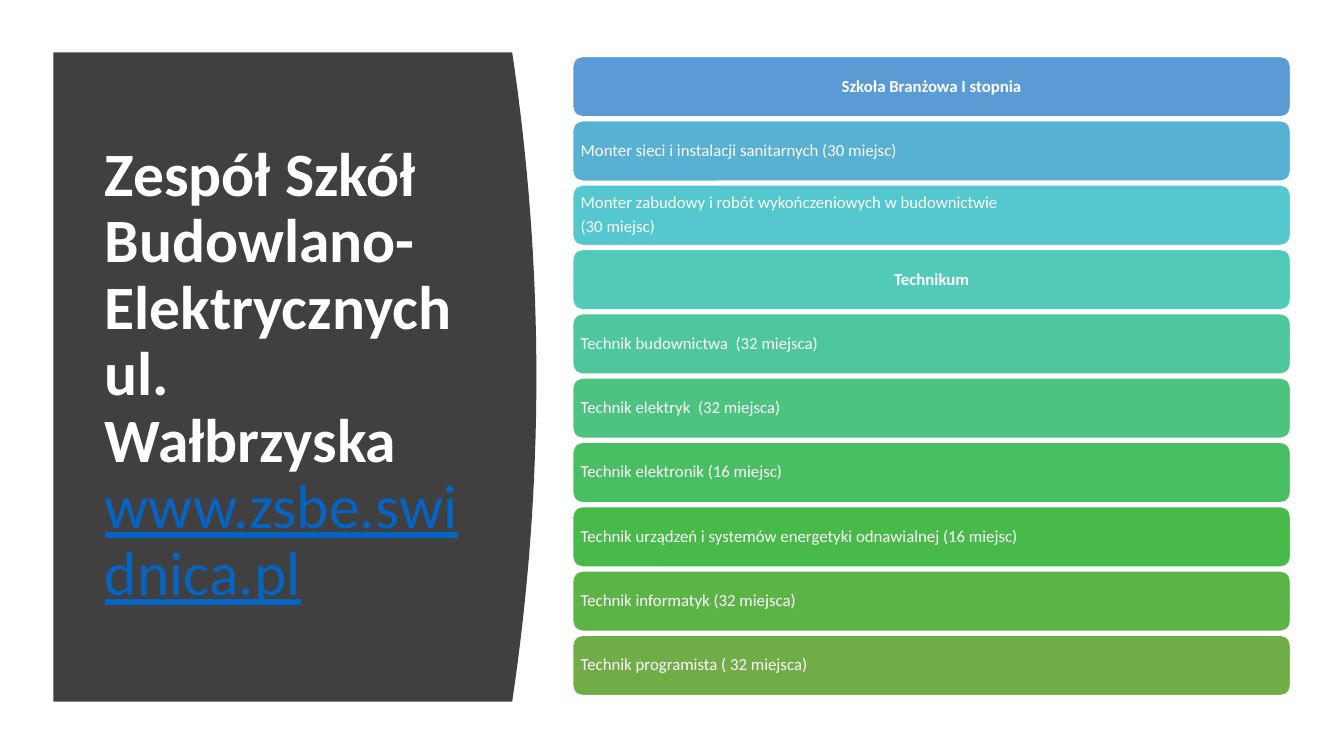
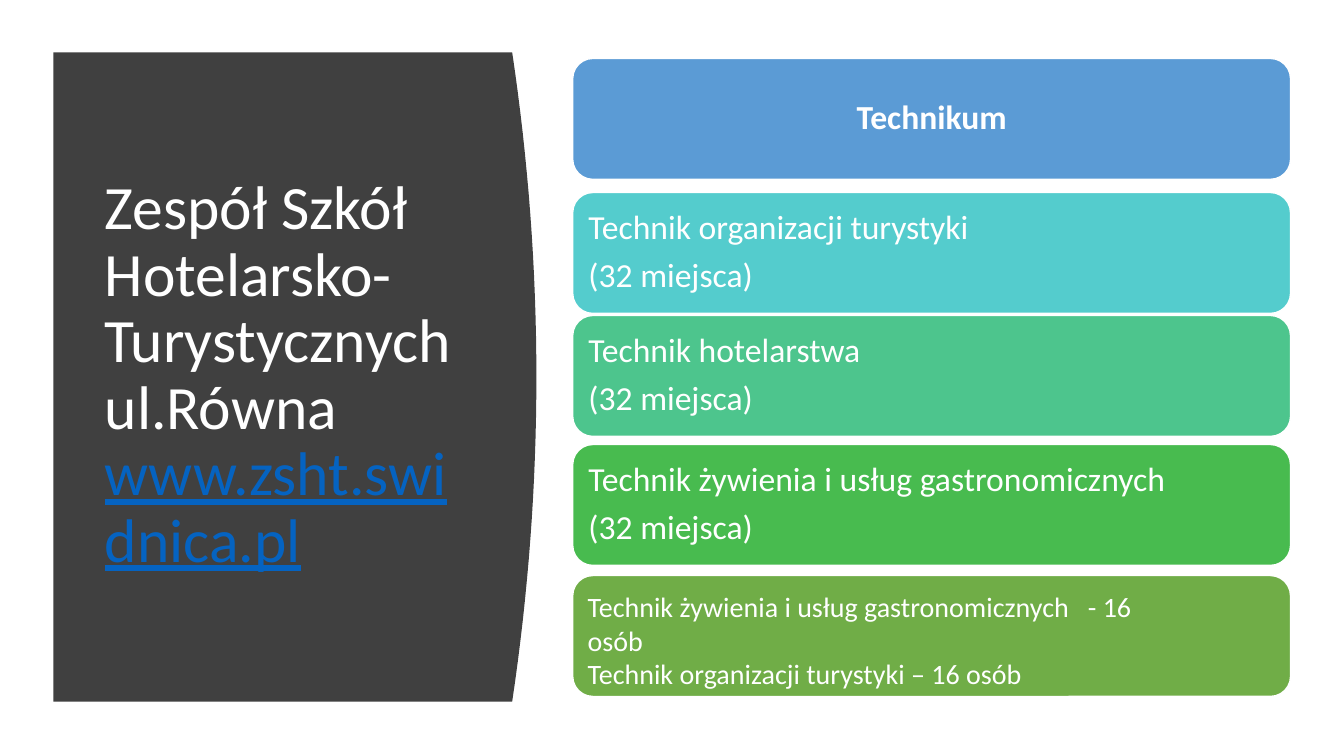
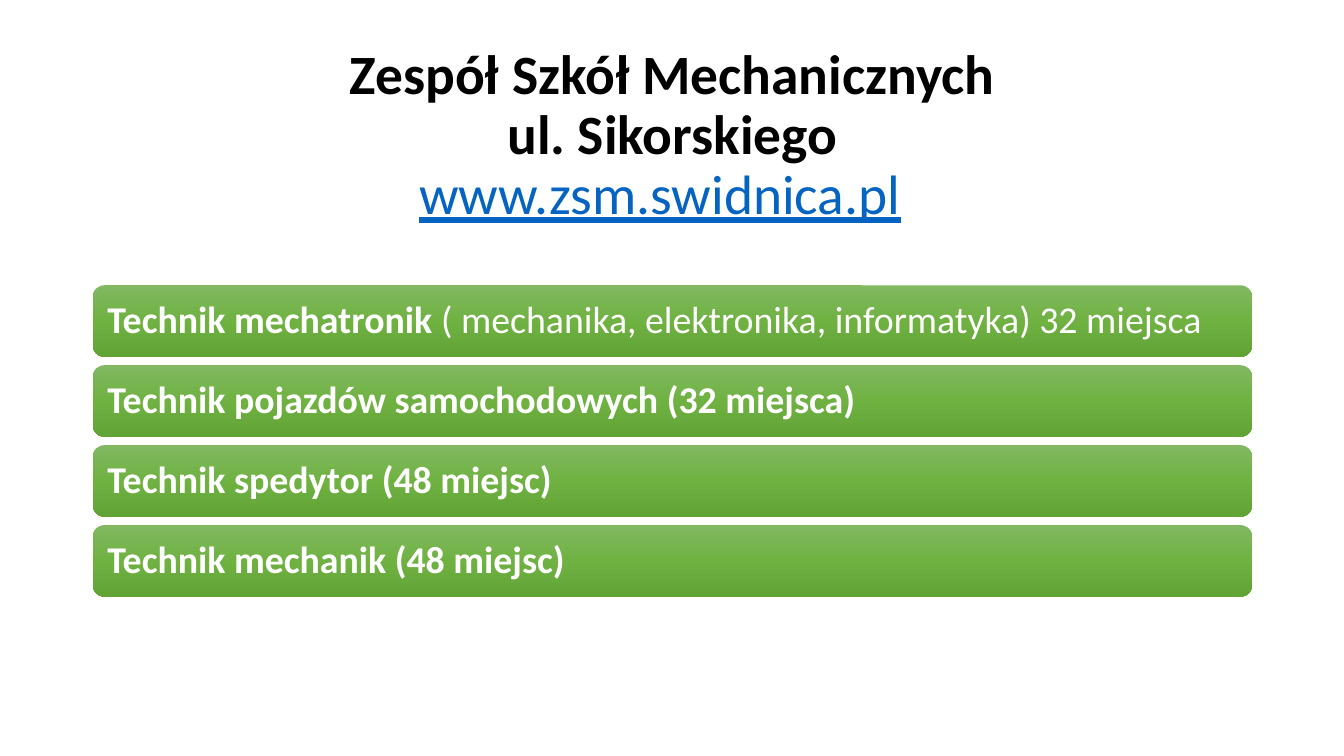
from copy import deepcopy
from dataclasses import dataclass

from pptx import Presentation
from pptx.dml.color import RGBColor
from pptx.enum.shapes import MSO_SHAPE
from pptx.enum.text import MSO_ANCHOR, PP_ALIGN
from pptx.oxml.ns import qn
from pptx.util import Inches, Pt

ROUNDED = MSO_SHAPE.ROUNDED_RECTANGLE
LEFT, CENTER = PP_ALIGN.LEFT, PP_ALIGN.CENTER
TOP, MIDDLE = MSO_ANCHOR.TOP, MSO_ANCHOR.MIDDLE


@dataclass(frozen=True)
class Theme:
    font: str = "Calibri"
    white: str = "FFFFFF"
    black: str = "000000"
    panel: str = "404040"
    link: str = "0563C1"
    gradient: tuple = ((0, "81B861"), (0.5, "6FB242"), (1, "62A336"))
    panel_title: float = 44
    wide_title: float = 39.6
    line_spacing: float = 0.9
    space_after: float = 0.35


THEME = Theme()

PANEL = dict(left=0.53, top=0.52, bottom=6.96, edge=5.08, bulge=0.24, steps=32)
PANEL_TITLE_BOX = (0.94, 1.11, 3.74, 5.24)
WIDE_TITLE_BOX = (0.92, 0.4, 11.5, 1.91)

BUILDING_SCHOOL = dict(
    name=["Zespół Szkół Budowlano-Elektrycznych", "ul. Wałbrzyska"],
    address="www.zsbe.swidnica.pl", tail=" ", bold=True,
    bars=dict(left=5.68, width=7.12, height=0.6, size=12, inset=0.05,
              tops=[0.56 + 0.638 * index for index in range(10)]),
    rows=[
        dict(lines=["Szkoła Branżowa I stopnia"], fill="5B9BD5", heading=True),
        dict(lines=["Monter sieci i instalacji sanitarnych (30 miejsc)"], fill="58B1D2"),
        dict(lines=["Monter zabudowy i robót wykończeniowych w budownictwie", "(30 miejsc)"],
             fill="55C7CE"),
        dict(lines=["Technikum"], fill="52CAB8", heading=True),
        dict(lines=["Technik budownictwa  (32 miejsca)"], fill="4FC79C"),
        dict(lines=["Technik elektryk  (32 miejsca)"], fill="4CC37F"),
        dict(lines=["Technik elektronik (16 miejsc)"], fill="49BF64"),
        dict(lines=["Technik urządzeń i systemów energetyki odnawialnej (16 miejsc)"],
             fill="47BA49"),
        dict(lines=["Technik informatyk (32 miejsca)"], fill="5CB447"),
        dict(lines=["Technik programista ( 32 miejsca)"], fill="70AD47"),
    ],
)

HOTEL_SCHOOL = dict(
    name=["Zespół Szkół Hotelarsko-Turystycznych", "ul.Równa"],
    address="www.zsht.swidnica.pl", tail=" ", bold=False,
    bars=dict(left=5.68, width=7.12, height=1.2, size=24, inset=0.1,
              tops=[0.58, 1.91, 3.13, 4.41, 5.71]),
    rows=[
        dict(lines=["Technikum"], fill="5B9BD5", heading=True),
        dict(lines=["Technik organizacji turystyki", "(32 miejsca)"], fill="54CCCD"),
        dict(lines=["Technik hotelarstwa", "(32 miejsca)"], fill="4DC58D"),
        dict(lines=["Technik żywienia i usług gastronomicznych", "(32 miejsca)"],
             fill="48BB4F"),
        dict(lines=["Technik żywienia i usług gastronomicznych   - 16 osób",
                    "Technik organizacji turystyki – 16 osób"], fill="70AD47",
             text=dict(size=20, anchor=TOP, insets=(0.09, 0.08, 0.95, 0),
                       line_spacing=1, space_after=0)),
    ],
)

MECHANICAL_SCHOOL = dict(
    name=["Zespół Szkół Mechanicznych", "ul. Sikorskiego"],
    address="www.zsm.swidnica.pl", tail="  ", bold=True,
    bars=dict(left=0.92, width=11.5, height=0.71, size=27, inset=0.11,
              tops=[2.83 + 0.793 * index for index in range(4)]),
    rows=[
        dict(lines=[[("Technik mechatronik", dict(bold=True)),
                     (" ( mechanika, elektronika, informatyka) 32 miejsca", {})]]),
        dict(lines=["Technik pojazdów samochodowych (32 miejsca)"], text=dict(bold=True)),
        dict(lines=["Technik spedytor (48 miejsc)"], text=dict(bold=True)),
        dict(lines=["Technik mechanik (48 miejsc)"], text=dict(bold=True)),
    ],
)


def color(value):
    return RGBColor.from_string(value)


def write_text(shape, lines, size, color_value=THEME.white, bold=False, align=LEFT,
               anchor=MIDDLE, insets=(0.1, 0.05, 0.1, 0.05),
               line_spacing=THEME.line_spacing, space_after=0):
    frame = shape.text_frame
    frame.word_wrap = True
    frame.vertical_anchor = anchor
    (frame.margin_left, frame.margin_top,
     frame.margin_right, frame.margin_bottom) = map(Inches, insets)
    for index, line in enumerate(lines):
        paragraph = frame.add_paragraph() if index else frame.paragraphs[0]
        paragraph.alignment = align
        paragraph.line_spacing = line_spacing
        paragraph.space_after = Pt(size * space_after)
        for text, style in [(line, {})] if isinstance(line, str) else line:
            if text == "\n":
                paragraph.add_line_break()
                continue
            run = paragraph.add_run()
            run.text = text
            run.font.name = THEME.font
            run.font.size = Pt(size)
            run.font.bold = style.get("bold", bold)
            run.font.underline = style.get("underline", False)
            run.font.color.rgb = color(style.get("color", color_value))


def fill_gradient(shape):
    shape.fill.gradient()
    first_stop = next(shape._element.spPr.iter(qn("a:gs")))
    first_stop.addnext(deepcopy(first_stop))
    for stop, (position, value) in zip(shape.fill.gradient_stops, THEME.gradient):
        stop.position = position
        stop.color.rgb = color(value)
    shape.fill.gradient_angle = 270


def add_panel(slide):
    top, bottom = PANEL["top"], PANEL["bottom"]
    middle, half = (top + bottom) / 2, (bottom - top) / 2
    points = []
    for step in range(PANEL["steps"] + 1):
        y = top + (bottom - top) * step / PANEL["steps"]
        x = PANEL["edge"] + PANEL["bulge"] * (1 - ((y - middle) / half) ** 2)
        points.append((Inches(x), Inches(y)))
    points.append((Inches(PANEL["left"]), Inches(bottom)))
    builder = slide.shapes.build_freeform(Inches(PANEL["left"]), Inches(top))
    builder.add_line_segments(points, close=True)
    panel = builder.convert_to_shape()
    panel.shadow.inherit = False
    panel.fill.solid()
    panel.fill.fore_color.rgb = color(THEME.panel)
    panel.line.fill.background()


def add_title(slide, school, box, **style):
    title = slide.shapes.add_textbox(*map(Inches, box))
    runs = [run for line in school["name"] for run in ((line, {}), ("\n", {}))]
    runs.append((school["address"], dict(color=THEME.link, bold=False, underline=True)))
    runs.append((school["tail"], dict(color=THEME.black, bold=False)))
    write_text(title, [runs], bold=school["bold"], **style)


def add_bars(slide, school):
    bars = school["bars"]
    for row, top in zip(school["rows"], bars["tops"]):
        bar = slide.shapes.add_shape(ROUNDED, Inches(bars["left"]), Inches(top),
                                     Inches(bars["width"]), Inches(bars["height"]))
        bar.shadow.inherit = False
        if "fill" in row:
            bar.fill.solid()
            bar.fill.fore_color.rgb = color(row["fill"])
            bar.line.color.rgb = color(THEME.white)
            bar.line.width = Pt(1)
        else:
            fill_gradient(bar)
            bar.line.fill.background()
        heading = row.get("heading", False)
        style = dict(size=bars["size"], insets=(bars["inset"],) * 4, bold=heading,
                     align=CENTER if heading else LEFT, space_after=THEME.space_after)
        write_text(bar, row["lines"], **{**style, **row.get("text", {})})


def main():
    presentation = Presentation()
    presentation.slide_width = Inches(13.33)
    presentation.slide_height = Inches(7.5)
    blank = presentation.slide_layouts[6]

    for school in (BUILDING_SCHOOL, HOTEL_SCHOOL):
        slide = presentation.slides.add_slide(blank)
        add_panel(slide)
        add_title(slide, school, PANEL_TITLE_BOX, size=THEME.panel_title)
        add_bars(slide, school)

    slide = presentation.slides.add_slide(blank)
    add_title(slide, MECHANICAL_SCHOOL, WIDE_TITLE_BOX, size=THEME.wide_title,
              color_value=THEME.black, align=CENTER)
    add_bars(slide, MECHANICAL_SCHOOL)

    presentation.save("out.pptx")


if __name__ == "__main__":
    main()
